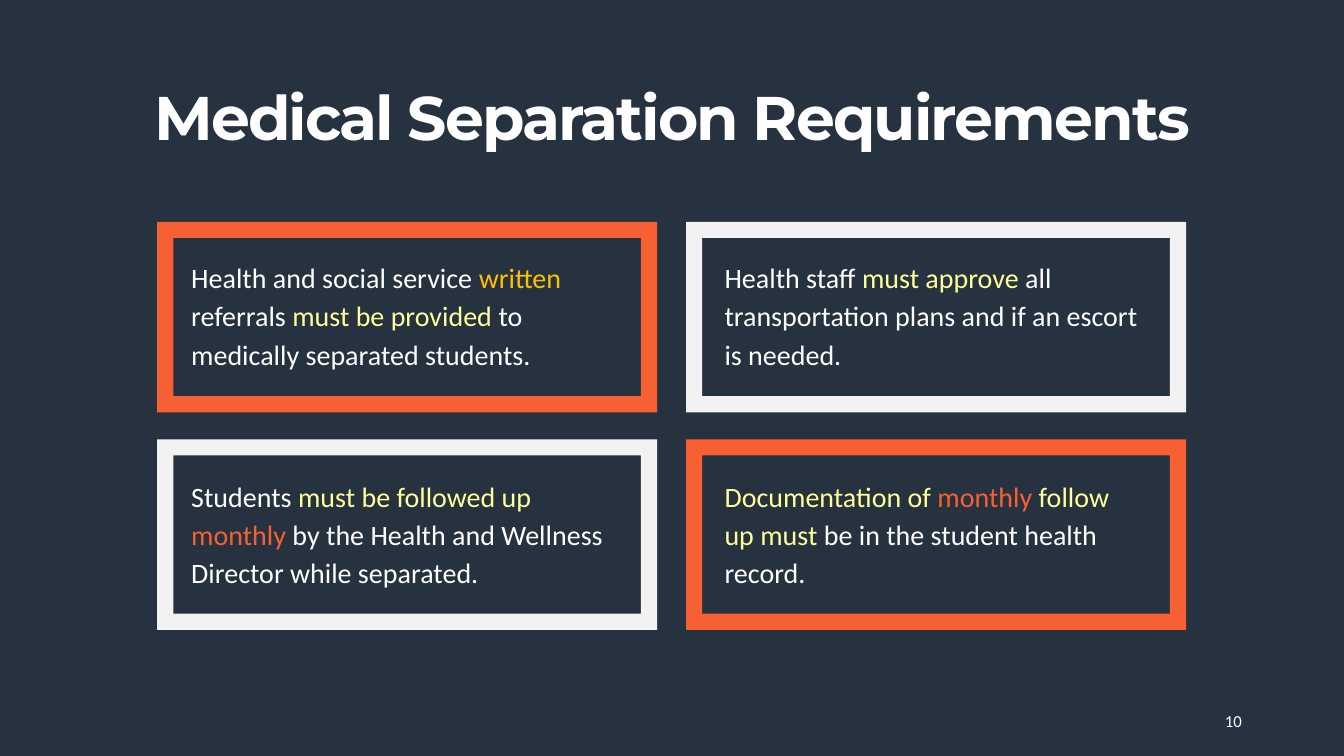
from pptx import Presentation
from pptx.dml.color import RGBColor
from pptx.enum.shapes import MSO_SHAPE as Preset
from pptx.enum.text import MSO_ANCHOR as Anchor, MSO_AUTO_SIZE as Fit, PP_ALIGN as Align
from pptx.util import Cm, Pt

NAVY = RGBColor(0x26, 0x32, 0x40)
WHITE = RGBColor(0xFF, 0xFF, 0xFF)
PALE = RGBColor(0xF2, 0xF2, 0xF2)
ORANGE = RGBColor(0xF7, 0x60, 0x33)
AMBER = RGBColor(0xFF, 0xC0, 0x00)
YELLOW = RGBColor(0xFF, 0xFF, 0x99)

REQUIREMENTS = [
    (ORANGE, [("Health and social service ", WHITE), ("written", AMBER),
              (" referrals ", WHITE), ("must be provided ", YELLOW),
              ("to medically separated students.", WHITE)]),
    (PALE, [("Health staff ", WHITE), ("must approve ", YELLOW),
            ("all transportation plans and if an escort is needed.", WHITE)]),
    (PALE, [("Students ", WHITE), ("must be followed up ", YELLOW), ("monthly", ORANGE),
            (" by the Health and Wellness Director while separated.", WHITE)]),
    (ORANGE, [("Documentation of ", YELLOW), ("monthly", ORANGE),
              (" follow up must ", YELLOW), ("be in the student health record.", WHITE)]),
]


def apply(target, formats):
    for name, value in formats.items():
        setattr(target, name, value)


class RequirementsSlide:
    heading_font = {"name": "Montserrat", "size": Pt(44), "bold": True}
    body_font = {"name": "Calibri", "size": Pt(20)}
    number_font = {"name": "Calibri", "size": Pt(12)}

    def __init__(self, deck):
        self.slide = deck.slides.add_slide(deck.slide_layouts[5])
        self.slide.background.fill.solid()
        self.slide.background.fill.fore_color.rgb = NAVY

    def fill_text(self, holder, pieces, font, frame, paragraph):
        apply(holder.text_frame, {"word_wrap": True, **frame})
        line = holder.text_frame.paragraphs[0]
        apply(line, paragraph)
        for words, color in pieces:
            run = line.add_run()
            run.text = words
            apply(run.font, font)
            run.font.color.rgb = color
        return line

    def title(self, words):
        heading = self.slide.shapes.title
        apply(heading, {"left": Cm(1.04), "top": Cm(1.8), "width": Cm(31.8), "height": Cm(2.49)})
        line = self.fill_text(heading, [(words, WHITE)], self.heading_font,
                              {"vertical_anchor": Anchor.MIDDLE, "auto_size": Fit.NONE},
                              {"alignment": Align.CENTER, "line_spacing": 0.9})
        line.runs[0]._r.get_or_add_rPr().set("spc", "-140")

    def frame(self, left, top, color):
        border = self.slide.shapes.add_shape(Preset.FRAME, Cm(left), Cm(top), Cm(12.6), Cm(4.8))
        border.adjustments[0] = 0.085
        border.shadow.inherit = False
        border.fill.solid()
        border.fill.fore_color.rgb = color
        border.line.fill.background()

    def requirement(self, left, top, pieces):
        statement = self.slide.shapes.add_textbox(Cm(left), Cm(top), Cm(10.95), Cm(3.12))
        self.fill_text(statement, pieces, self.body_font, {"auto_size": Fit.SHAPE_TO_FIT_TEXT},
                       {"line_spacing": 1.14, "space_before": Pt(6)})

    def page_number(self, number):
        page = self.slide.shapes.add_textbox(Cm(23.93), Cm(17.65), Cm(7.62), Cm(1.02))
        self.fill_text(page, [(number, WHITE)], self.number_font,
                       {"vertical_anchor": Anchor.MIDDLE}, {"alignment": Align.RIGHT})


def main():
    deck = Presentation()
    apply(deck, {"slide_width": Cm(33.87), "slide_height": Cm(19.05)})
    separation = RequirementsSlide(deck)
    separation.title("Medical Separation Requirements")
    for index, (color, pieces) in enumerate(REQUIREMENTS):
        row, column = divmod(index, 2)
        separation.frame(3.96 + 13.33 * column, 5.59 + 5.48 * row, color)
        separation.requirement(4.57 + 13.44 * column, 6.32 + 5.51 * row, pieces)
    separation.page_number("10")
    deck.save("out.pptx")


if __name__ == "__main__":
    main()
